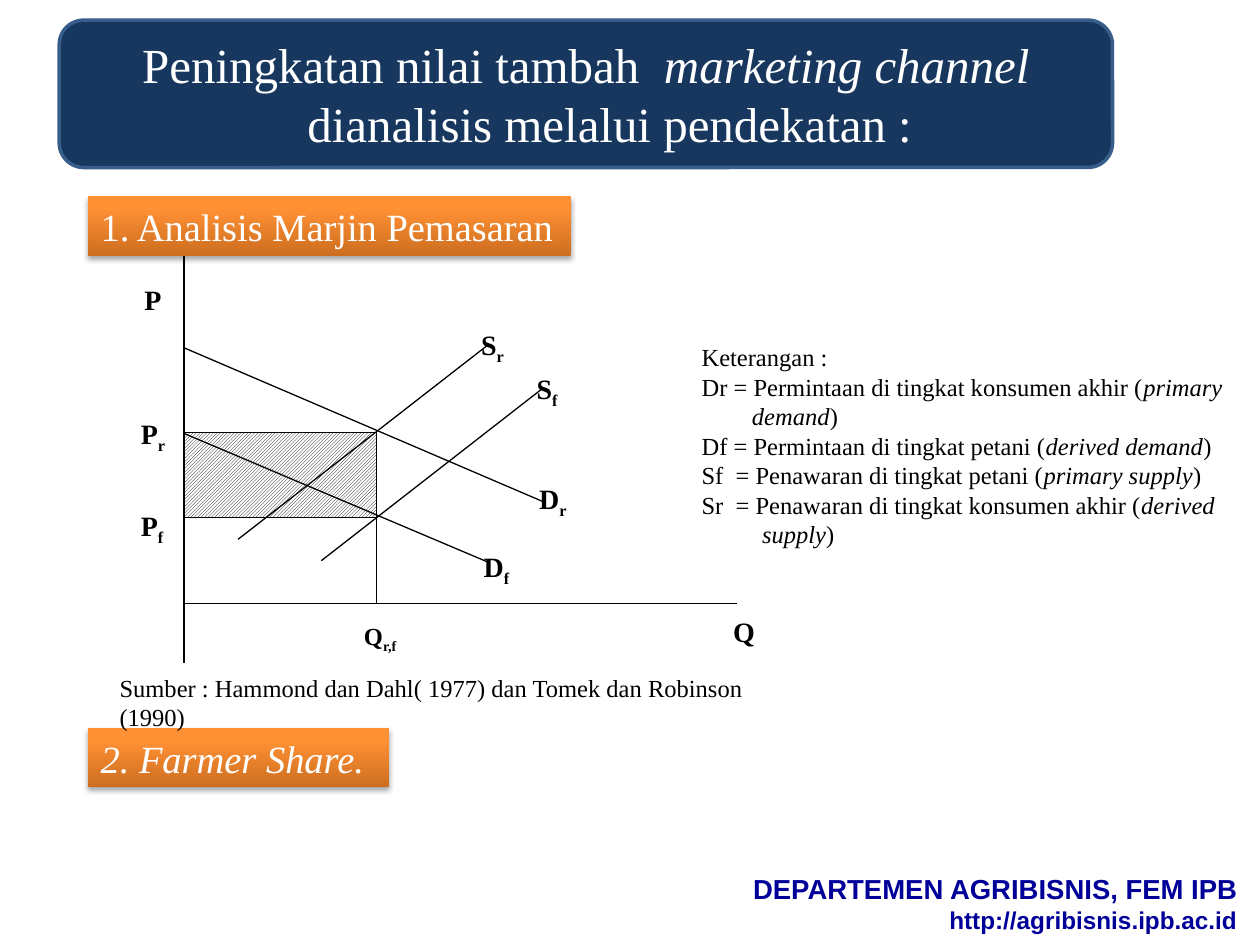
from copy import deepcopy

from lxml.etree import SubElement
from pptx import Presentation
from pptx.dml.color import RGBColor
from pptx.enum.dml import MSO_PATTERN
from pptx.enum.shapes import MSO_CONNECTOR, MSO_SHAPE
from pptx.enum.text import MSO_ANCHOR, PP_ALIGN
from pptx.oxml.ns import qn
from pptx.util import Inches, Pt

COLORS = {
    "black": "000000", "white": "FFFFFF", "navy": "17375E", "edge": "385D8A",
    "footer": "000099", "dark": "CC6E20", "orange": "FF9034", "light": "FF9136",
}
SERIF = "Times New Roman"

# The slide is a grid of 100 columns by 75 rows.
COLUMNS, ROWS, CELL = 100, 75, Inches(0.1)

# Diagram positions in grid cells
AXIS_X, AXIS_Y, QUANTITY_X = 14.6, 47.9, 29.9
RETAIL_Y, FARM_Y = 34.3, 41.1

DIAGRAM_LINES = [
    (AXIS_X, AXIS_Y, 58.5, AXIS_Y),
    (AXIS_X, 52.6, AXIS_X, 18.6),
    (AXIS_X, FARM_Y, QUANTITY_X, FARM_Y),
    (AXIS_X, RETAIL_Y, QUANTITY_X, RETAIL_Y),
    (QUANTITY_X, RETAIL_Y, QUANTITY_X, AXIS_Y),
    (AXIS_X, 34.4, 38.7, 44.6),
    (AXIS_X, 27.6, 43.3, 39.9),
    (18.9, 42.8, 38.7, 27.4),
    (25.5, 44.5, 43.1, 30.8),
]
CURVE_LABELS = [
    ("D", "f", 37.4, 43.1), ("D", "r", 41.8, 37.7),
    ("S", "f", 41.6, 29), ("S", "r", 37.2, 25.5),
    ("P", "r", 10.2, 32.6), ("P", "f", 10.2, 39.9),
]
AXIS_LABELS = [("P", 7.8, 21.9), ("Q", 54.9, 48.3)]

# Each legend line: hanging indent in cells, plain text, italic text, closing text
LEGEND = [
    (0, "Keterangan :", "", ""),
    (4, "Dr = Permintaan di tingkat konsumen akhir (", "primary demand", ")"),
    (0, "Df = Permintaan di tingkat petani (", "derived demand", ")"),
    (0, "Sf  = Penawaran di tingkat petani (", "primary supply", ")"),
    (4.8, "Sr  = Penawaran di tingkat konsumen akhir (", "derived supply", ")"),
]


def cells(*counts):
    return [int(count * CELL) for count in counts]


def color(name):
    return RGBColor.from_string(COLORS[name])


def add_run(paragraph, text, size, name="black", font=SERIF, bold=False, italic=False):
    run = paragraph.add_run()
    run.text = text
    run.font.size = Pt(size)
    run.font.name = font
    run.font.bold = bold
    run.font.italic = italic
    run.font.color.rgb = color(name)
    return run


def hang(paragraph, indent):
    """Indent all lines of the paragraph but the first."""
    properties = paragraph._p.get_or_add_pPr()
    distance, = cells(indent)
    properties.set("marL", str(distance))
    properties.set("indent", str(-distance))


def add_text_box(slide, *box, anchor=MSO_ANCHOR.TOP):
    frame = slide.shapes.add_textbox(*cells(*box)).text_frame
    frame.word_wrap = True
    frame.vertical_anchor = anchor
    return frame


def add_label(slide, box, letter, subscript="", size=16, align=PP_ALIGN.LEFT):
    paragraph = add_text_box(slide, *box).paragraphs[0]
    paragraph.alignment = align
    paragraph.space_after = Pt(10)
    add_run(paragraph, letter, size, bold=True)
    if subscript:
        run = add_run(paragraph, subscript, size, bold=True)
        run._r.get_or_add_rPr().set("baseline", "-25000")


def add_box(slide, kind, *box):
    shape = slide.shapes.add_shape(kind, *cells(*box))
    shape.shadow.inherit = False
    return shape


def add_line(slide, *ends):
    line = slide.shapes.add_connector(MSO_CONNECTOR.STRAIGHT, *cells(*ends))
    line.line.color.rgb = color("black")
    line.line.width = Pt(0.75)
    SubElement(line._element.spPr, qn("a:effectLst"))


def add_drop_shadow(shape):
    effects = shape._element.spPr.find(qn("a:effectLst"))
    shadow = SubElement(effects, qn("a:outerShdw"), blurRad=str(Pt(3.1)),
                        dist=str(Pt(1.8)), dir="5400000", rotWithShape="0")
    black = SubElement(shadow, qn("a:srgbClr"), val=COLORS["black"])
    SubElement(black, qn("a:alpha"), val="35000")


def add_heading(slide, top, width, text, italic=False):
    shape = add_box(slide, MSO_SHAPE.RECTANGLE, 7, top, width, 4.7)
    shape.line.fill.background()
    shape.fill.gradient()
    shape.fill.gradient_angle = 90
    stop_list = shape._element.spPr.find(".//" + qn("a:gsLst"))
    stop_list.append(deepcopy(stop_list[0]))
    stops = [(0, "dark"), (0.8, "orange"), (1, "light")]
    for stop, (position, name) in zip(shape.fill.gradient_stops, stops):
        stop.position = position
        stop.color.rgb = color(name)
    add_drop_shadow(shape)
    shape.text_frame.word_wrap = False
    paragraph = shape.text_frame.paragraphs[0]
    paragraph.alignment = PP_ALIGN.LEFT
    add_run(paragraph, text, 22, "white", italic=italic)


def add_title(slide):
    shape = add_box(slide, MSO_SHAPE.ROUNDED_RECTANGLE, 4.7, 1.6, 83.6, 11.7)
    shape.fill.solid()
    shape.fill.fore_color.rgb = color("navy")
    shape.line.color.rgb = color("edge")
    shape.line.width = Pt(2)
    paragraph = shape.text_frame.paragraphs[0]
    paragraph.alignment = PP_ALIGN.CENTER
    hang(paragraph, 3.8)
    add_run(paragraph, "Peningkatan nilai tambah  ", 28, "white")
    add_run(paragraph, "marketing channel ", 28, "white", italic=True)
    add_run(paragraph, "dianalisis melalui pendekatan :", 28, "white")


def add_diagram(slide):
    margin = add_box(slide, MSO_SHAPE.RECTANGLE, AXIS_X, RETAIL_Y,
                     QUANTITY_X - AXIS_X, FARM_Y - RETAIL_Y)
    margin.fill.patterned()
    margin.fill.pattern = MSO_PATTERN.LIGHT_UPWARD_DIAGONAL
    margin.fill.fore_color.rgb = color("black")
    margin.fill.back_color.rgb = color("white")
    margin.line.color.rgb = color("black")
    margin.line.width = Pt(0.75)
    for ends in DIAGRAM_LINES:
        add_line(slide, *ends)
    for letter, subscript, left, top in CURVE_LABELS:
        add_label(slide, (left, top, 8.8, 5.1), letter, subscript)
    add_label(slide, (27.9, 48.8, 6, 3.6), "Q", "r,f", size=14)
    for letter, left, top in AXIS_LABELS:
        add_label(slide, (left, top, 6, 3.6), letter, align=PP_ALIGN.RIGHT)


def add_legend(slide):
    frame = add_text_box(slide, 54.7, 26.6, 45.3, 17.5, anchor=MSO_ANCHOR.MIDDLE)
    for index, (indent, plain, italic, closing) in enumerate(LEGEND):
        paragraph = frame.add_paragraph() if index else frame.paragraphs[0]
        hang(paragraph, indent)
        add_run(paragraph, plain, 14)
        if italic:
            add_run(paragraph, italic, 14, italic=True)
            add_run(paragraph, closing, 14)


def add_footer(slide):
    frame = add_text_box(slide, 9.2, 69.2, 90, 5, anchor=MSO_ANCHOR.MIDDLE)
    lines = [("DEPARTEMEN AGRIBISNIS, FEM IPB", 15.7), ("http://agribisnis.ipb.ac.id", 13.9)]
    for index, (text, size) in enumerate(lines):
        paragraph = frame.add_paragraph() if index else frame.paragraphs[0]
        paragraph.alignment = PP_ALIGN.RIGHT
        add_run(paragraph, text, size, "footer", font="Arial", bold=True)


def main():
    presentation = Presentation()
    presentation.slide_width, presentation.slide_height = cells(COLUMNS, ROWS)
    slide = presentation.slides.add_slide(presentation.slide_layouts[6])
    add_footer(slide)
    add_diagram(slide)
    add_heading(slide, 15.6, 38.3, "1. Analisis Marjin Pemasaran")
    add_heading(slide, 57.8, 23.9, "2. Farmer Share.", italic=True)
    add_title(slide)
    add_legend(slide)
    source = add_text_box(slide, 8.5, 52.9, 57.1, 5.7).paragraphs[0]
    add_run(source, "Sumber : Hammond dan Dahl( 1977) dan Tomek dan Robinson (1990)", 14)
    presentation.save("out.pptx")


if __name__ == "__main__":
    main()
